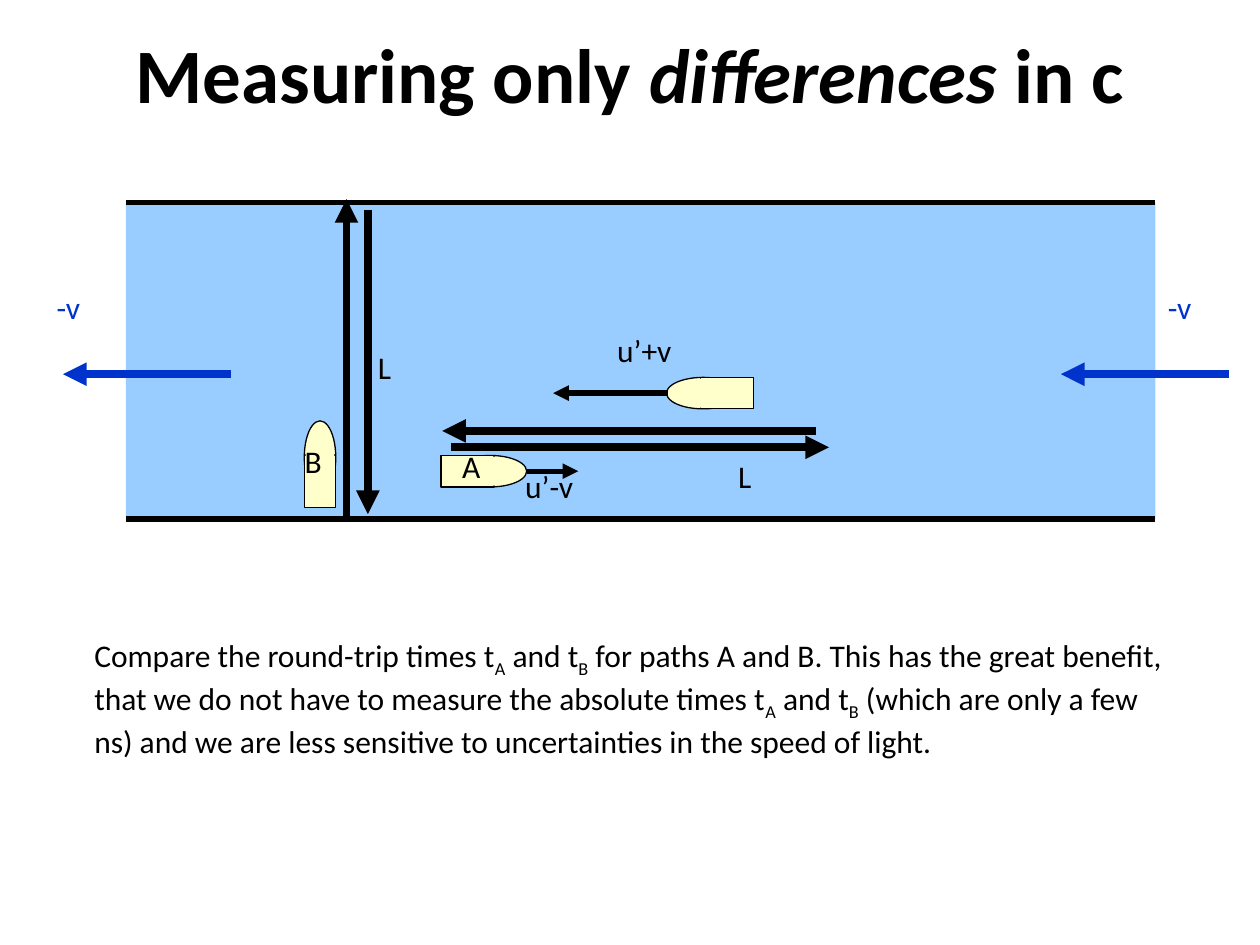
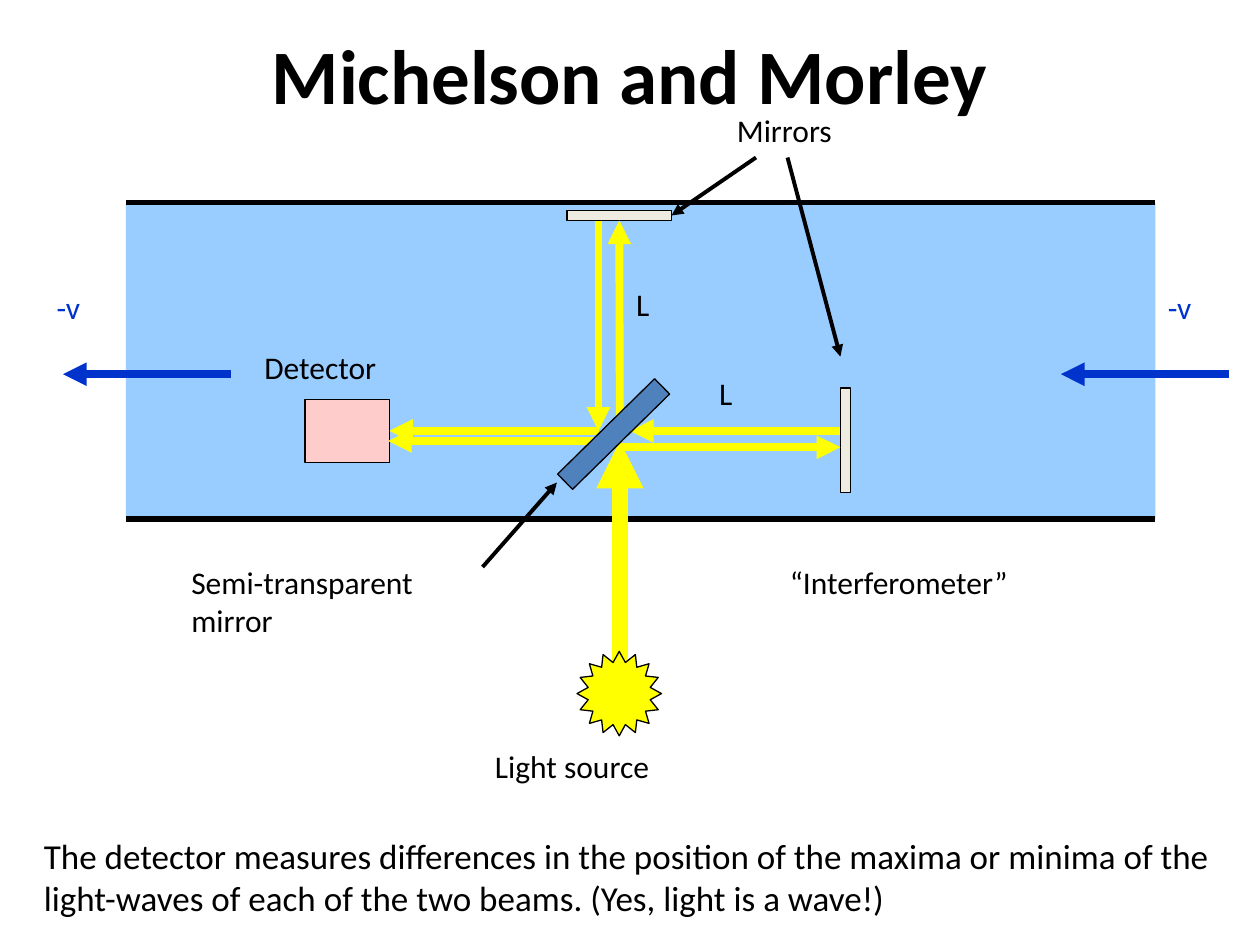
import dataclasses
import pptx
import pptx.dml.color
import pptx.enum.shapes
import pptx.oxml
import pptx.oxml.ns
import pptx.util

Inches = pptx.util.Inches
SHAPE = pptx.enum.shapes.MSO_SHAPE
TOP, LEFT, BOTTOM, RIGHT = range(4)


@dataclasses.dataclass(frozen=True)
class Theme:
    font: str = "Calibri"
    black: str = "000000"
    water: str = "99CCFF"
    wind: str = "0033CC"
    hull: str = "FFFFCC"
    light: str = "FFFF00"
    mirror: str = "EEECE1"
    glass: str = "4F81BD"
    sensor: str = "FFCCCC"
    title: float = 44
    body: float = 20
    label: float = 18
    edge: float = 0.75
    thin: float = 2.25
    bank: float = 3
    beam: float = 4.5
    source: float = 9


THEME = Theme()


def rgb(code):
    return pptx.dml.color.RGBColor.from_string(code)


def place(item, box):
    item.left, item.top, item.width, item.height = map(Inches, box)


def italic(run):
    run.font.italic = True


def lower(run):
    run.font._element.set("baseline", "-25000")


def write(par, text, size, color=THEME.black, bold=None, accent=None):
    """Fill a paragraph; pieces between underscores get the accent."""
    for index, piece in enumerate(text.split("_")):
        run = par.add_run()
        run.text = piece
        run.font.name = THEME.font
        run.font.size = pptx.util.Pt(size)
        run.font.bold = bold
        run.font.color.rgb = rgb(color)
        if index % 2:
            accent(run)


def add_title(slide, text, box):
    place(slide.shapes.title, box)
    par = slide.shapes.title.text_frame.paragraphs[0]
    write(par, text, THEME.title, bold=True, accent=italic)


def add_text(slide, text, box, size=THEME.label, color=THEME.black):
    frame = slide.shapes.add_textbox(*map(Inches, box)).text_frame
    frame.word_wrap = True
    for index, line in enumerate(text.split("\n")):
        par = frame.add_paragraph() if index else frame.paragraphs[0]
        write(par, line, size, color, accent=lower)


def add_shape(slide, kind, box, fill, edged=True, turn=0):
    shape = slide.shapes.add_shape(kind, *map(Inches, box))
    shape.shadow.inherit = False
    shape.rotation = turn
    shape.fill.solid()
    shape.fill.fore_color.rgb = rgb(fill)
    if edged:
        shape.line.color.rgb = rgb(THEME.black)
        shape.line.width = pptx.util.Pt(THEME.edge)
    else:
        shape.line.fill.background()
    return shape


def add_line(slide, start, end, width, color=THEME.black):
    line = slide.shapes.add_connector(
        pptx.enum.shapes.MSO_CONNECTOR.STRAIGHT, *map(Inches, start + end))
    line.line.color.rgb = rgb(color)
    line.line.width = pptx.util.Pt(width)
    props = line._element.spPr
    props.append(pptx.oxml.parse_xml(
        "<a:effectLst %s/>" % pptx.oxml.ns.nsdecls("a")))
    return line


def add_arrow(slide, start, end, width, color=THEME.black):
    arrow = add_line(slide, start, end, width, color)
    arrow.line._get_or_add_ln().append(pptx.oxml.parse_xml(
        '<a:tailEnd %s type="triangle"/>' % pptx.oxml.ns.nsdecls("a")))
    return arrow


def add_beam(slide, start, end, width=THEME.beam):
    return add_arrow(slide, start, end, width, THEME.light)


def add_river(slide):
    """Draw the stream between two banks, with the current at both ends."""
    left, right, top, base = 1, 9.17, 1.61, 4.12
    add_shape(slide, SHAPE.RECTANGLE,
              (left, top, right - left, base - top), THEME.water, edged=False)
    for y in (top, base):
        add_line(slide, (left, y), (right, y), THEME.bank)
    for start, label in ((1.83, 0.35), (9.75, 9.17)):
        add_arrow(slide, (start, 2.97), (start - 1.33, 2.97),
                  THEME.beam, THEME.wind)
        add_text(slide, "-v", (label, 2.24, 0.48, 0.5), color=THEME.wind)


def add_boat(slide, x, y, back, turn=0):
    """Draw a boat with its bow centred on x, y and its stern shifted by back."""
    parts = ((SHAPE.OVAL, (0, 0), 0.58, 0.25, True),
             (SHAPE.RECTANGLE, back, 0.42, 0.25, True),
             (SHAPE.RECTANGLE, (0, 0), 0.08, 0.23, False))
    for kind, (dx, dy), wide, high, edged in parts:
        box = (x + dx - wide / 2, y + dy - high / 2, wide, high)
        add_shape(slide, kind, box, THEME.hull, edged, turn)


def fill_boats(slide):
    add_title(slide, "Measuring only _differences_ in c", (0, -0.05, 10, 1.25))
    add_river(slide)
    add_arrow(slide, (2.75, 4.11), (2.75, 1.58), THEME.beam)
    add_arrow(slide, (2.92, 1.67), (2.92, 4.08), THEME.beam)
    add_arrow(slide, (3.58, 3.55), (6.58, 3.55), THEME.beam)
    add_arrow(slide, (6.48, 3.42), (3.51, 3.42), THEME.beam)

    add_boat(slide, 2.54, 3.63, (0, 0.19), 270)
    add_boat(slide, 3.89, 3.74, (-0.18, 0))
    add_boat(slide, 5.58, 3.12, (0.19, 0), 180)
    add_arrow(slide, (4.18, 3.74), (4.59, 3.74), THEME.bank)
    add_arrow(slide, (5.3, 3.12), (4.39, 3.12), THEME.bank)

    for text, x, y, wide in (("L", 2.9, 2.71, 0.39), ("B", 2.32, 3.46, 0.42),
                             ("L", 5.76, 3.58, 0.39), ("A", 3.57, 3.5, 0.42),
                             ("u’-v", 4.07, 3.66, 0.74),
                             ("u’+v", 4.8, 2.58, 0.83)):
        add_text(slide, text, (x, y, wide, 0.5))
    add_text(slide, "Compare the round-trip times t_A_ and t_B_ for paths A "
             "and B. This has the great benefit, that we do not have to "
             "measure the absolute times t_A_ and t_B_ (which are only a few "
             "ns) and we are less sensitive to uncertainties in the speed of "
             "light.", (0.65, 5, 8.77, 2.1))


def fill_lab(slide):
    add_title(slide, "Michelson and Morley", (0.5, 0, 9, 1.17))
    add_river(slide)
    sensor = add_shape(slide, SHAPE.RECTANGLE, (2.42, 3.17, 0.67, 0.5),
                       THEME.sensor)
    add_shape(slide, SHAPE.RECTANGLE, (6.67, 3.08, 0.08, 0.83), THEME.mirror)
    upper = add_shape(slide, SHAPE.RECTANGLE, (4.5, 1.67, 0.83, 0.08),
                      THEME.mirror)

    add_beam(slide, (4.92, 3.55), (6.67, 3.55))
    add_beam(slide, (6.67, 3.42), (5, 3.42))
    add_beam(slide, (4.92, 5.25), (4.92, 3.5), THEME.source)
    add_beam(slide, (4.92, 3.5), (4.92, 1.75)).end_connect(upper, BOTTOM)
    add_beam(slide, (4.75, 1.75), (4.75, 3.42))
    add_beam(slide, (4.75, 3.42), (3.08, 3.42)).end_connect(sensor, RIGHT)
    add_beam(slide, (4.75, 3.5), (3.08, 3.5))

    pointer = add_arrow(slide, (6, 1.25), (5.33, 1.71), THEME.thin)
    pointer.end_connect(upper, RIGHT)
    add_arrow(slide, (6.25, 1.25), (6.67, 2.83), THEME.thin)
    add_arrow(slide, (3.83, 4.5), (4.42, 3.83), THEME.thin)
    lamp = add_shape(slide, SHAPE.STAR_16_POINT, (4.58, 5.17, 0.67, 0.67),
                     THEME.light)
    lamp.adjustments[0] = 0.375
    add_shape(slide, SHAPE.RECTANGLE, (4.33, 3.36, 1.08, 0.17), THEME.glass,
              turn=315.5)

    for text, x, y, wide in (("Mirrors", 5.75, 0.83, 1.24),
                             ("Light source", 3.83, 5.88, 2.02),
                             ("“Interferometer”", 6.17, 4.42, 2.52),
                             ("Semi-transparent\nmirror", 1.42, 4.42, 2.76),
                             ("L", 4.95, 2.21, 0.39), ("L", 5.61, 2.92, 0.39),
                             ("Detector", 2, 2.71, 1.46)):
        add_text(slide, text, (x, y, wide, 0.5))
    add_text(slide, "The detector measures differences in the position of "
             "the maxima or minima of the light-waves of each of the two "
             "beams. (Yes, light is a wave!)", (0.25, 6.57, 9.67, 0.77),
             THEME.body)


def main():
    deck = pptx.Presentation()
    deck.slide_width, deck.slide_height = Inches(10), Inches(7.5)
    layout = deck.slide_layouts.get_by_name("Title Only")
    for fill in (fill_boats, fill_lab):
        fill(deck.slides.add_slide(layout))
    deck.save("out.pptx")


if __name__ == "__main__":
    main()
